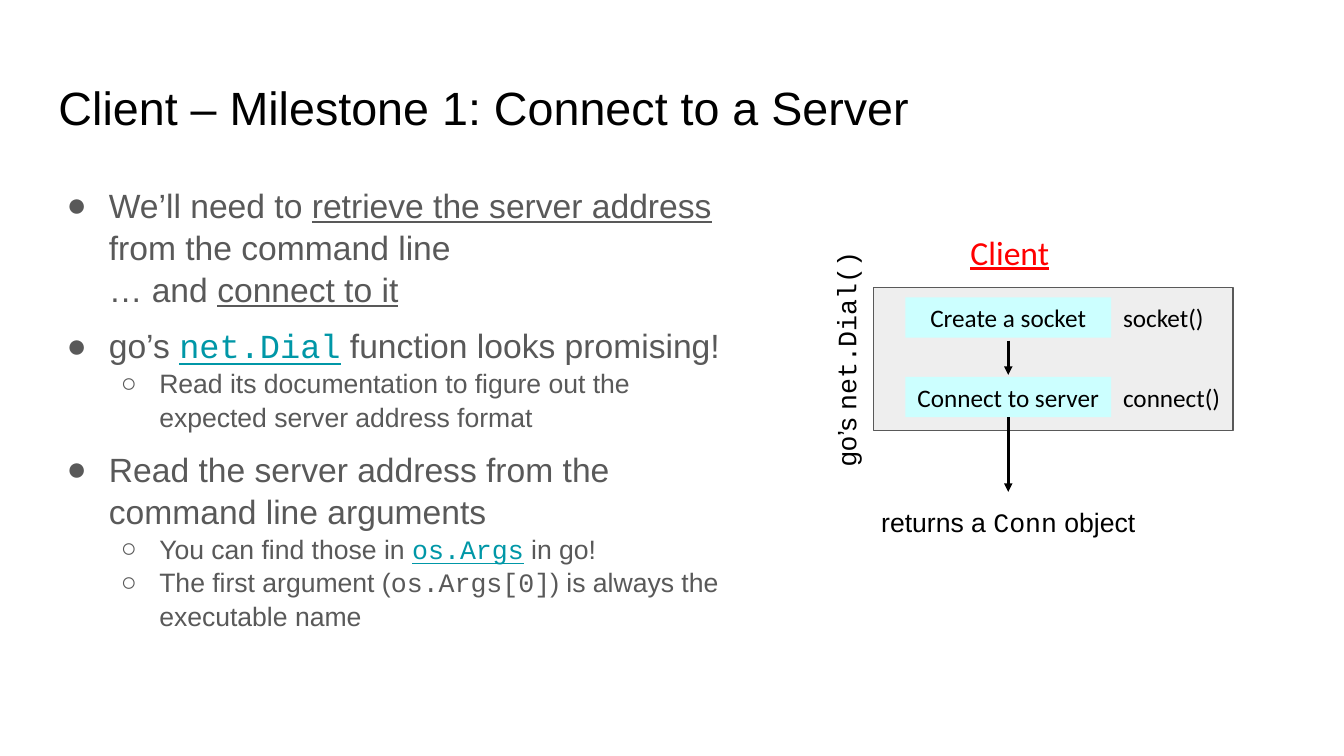
from dataclasses import dataclass

from lxml.etree import SubElement
from pptx import Presentation
from pptx.dml.color import RGBColor
from pptx.enum.shapes import MSO_CONNECTOR, MSO_SHAPE
from pptx.enum.text import MSO_ANCHOR, PP_ALIGN
from pptx.oxml.ns import qn
from pptx.util import Inches, Pt


@dataclass(frozen=True)
class Theme:
    black: str = "000000"
    gray: str = "595959"
    panel: str = "EEEEEE"
    step: str = "CCFFFF"
    link: str = "0097A7"
    heading: str = "FF0000"
    sans: str = "Arial"
    diagram: str = "Calibri"
    code: str = "Courier New"
    title_size: float = 33.3
    large: float = 24
    medium: float = 19
    small: float = 18


THEME = Theme()

# Each bullet: level, marker, space before in points, runs of (text, style).
BULLETS = [
    (0, "●", 0, [("We’ll need to ", ""), ("retrieve the server address ", "underline"),
                 ("from the command line", "")]),
    (0, None, 0, [("… and ", ""), ("connect to it", "underline")]),
    (0, "●", 10, [("go’s ", ""), ("net.Dial", "code link underline"),
                  (" function looks promising!", "")]),
    (1, "○", 0, [("Read its documentation to figure out the expected server address format", "")]),
    (0, "●", 10, [("Read the server address from the command line arguments", "")]),
    (1, "○", 0, [("You can find those in ", ""), ("os.Args", "code link underline"),
                 (" in go!", "")]),
    (1, "○", 0, [("The first argument (", ""), ("os.Args[0]", "code"),
                 (") is always the executable name", "")]),
]
STEPS = [("Create a socket", "socket()"), ("Connect to server", "connect()")]
STEP_LEFT, STEP_TOP, STEP_WIDTH, STEP_HEIGHT, STEP_PITCH = 8.98, 2.95, 2.04, 0.4, 0.79


def rgb(color):
    return RGBColor.from_string(color)


def write_runs(paragraph, runs, size, color, font_name=THEME.sans):
    """Add (text, style) runs; a style may hold the words code, link and underline."""
    for text, style in runs:
        run = paragraph.add_run()
        run.text = text
        run.font.size = Pt(size)
        run.font.name = THEME.code if "code" in style else font_name
        run.font.color.rgb = rgb(THEME.link if "link" in style else color)
        run.font.underline = "underline" in style


def set_insets(text_frame, horizontal, vertical):
    text_frame.margin_left = text_frame.margin_right = Inches(horizontal)
    text_frame.margin_top = text_frame.margin_bottom = Inches(vertical)
    text_frame.word_wrap = True


def add_text(slide, box, runs, size, color=THEME.black, font_name=THEME.sans,
             alignment=PP_ALIGN.CENTER, insets=(0.1, 0.1)):
    text_box = slide.shapes.add_textbox(*map(Inches, box))
    set_insets(text_box.text_frame, *insets)
    paragraph = text_box.text_frame.paragraphs[0]
    paragraph.alignment = alignment
    write_runs(paragraph, runs, size, color, font_name)
    return text_box


def add_rectangle(slide, box, fill, outline=None):
    shape = slide.shapes.add_shape(MSO_SHAPE.RECTANGLE, *map(Inches, box))
    shape.shadow.inherit = False
    shape.fill.solid()
    shape.fill.fore_color.rgb = rgb(fill)
    if outline:
        shape.line.color.rgb = rgb(outline)
        shape.line.width = Pt(0.75)
    else:
        shape.line.fill.background()
    return shape


def add_down_arrow(slide, x, top, bottom):
    arrow = slide.shapes.add_connector(
        MSO_CONNECTOR.STRAIGHT, Inches(x), Inches(top), Inches(x), Inches(bottom))
    arrow.line.color.rgb = rgb(THEME.black)
    arrow.line.width = Pt(2)
    SubElement(arrow.line._get_or_add_ln(), qn("a:tailEnd"), type="triangle")
    SubElement(arrow._element.spPr, qn("a:effectLst"))


def format_bullet(paragraph, level, marker):
    """Set the hanging indent and marker, after the paragraph spacing is in place."""
    hanging = (-0.42, -0.38)[level] if marker else 0
    properties = paragraph._p.get_or_add_pPr()
    properties.set("marL", str(Inches(0.5 * (level + 1))))
    properties.set("indent", str(Inches(hanging)))
    if marker:
        bullet_color = SubElement(properties, qn("a:buClr"))
        SubElement(bullet_color, qn("a:srgbClr"), val=THEME.gray)
        SubElement(properties, qn("a:buFont"), typeface=THEME.sans)
        SubElement(properties, qn("a:buChar"), char=marker)
    else:
        SubElement(properties, qn("a:buNone"))


def add_bullets(slide, box, bullets):
    text_frame = slide.shapes.add_textbox(*map(Inches, box)).text_frame
    set_insets(text_frame, 0.13, 0.13)
    for index, (level, marker, space_before, runs) in enumerate(bullets):
        paragraph = text_frame.add_paragraph() if index else text_frame.paragraphs[0]
        paragraph.level = level
        paragraph.line_spacing = 1.05
        paragraph.space_before = Pt(space_before)
        format_bullet(paragraph, level, marker)
        write_runs(paragraph, runs, (THEME.large, THEME.medium)[level], THEME.gray)


def add_step(slide, top, label, call):
    shape = add_rectangle(slide, (STEP_LEFT, top, STEP_WIDTH, STEP_HEIGHT), THEME.step)
    set_insets(shape.text_frame, 0.1, 0.05)
    shape.text_frame.vertical_anchor = MSO_ANCHOR.MIDDLE
    paragraph = shape.text_frame.paragraphs[0]
    paragraph.alignment = PP_ALIGN.CENTER
    write_runs(paragraph, [(label, "")], THEME.small, THEME.black, THEME.diagram)
    add_text(slide, (STEP_LEFT + STEP_WIDTH + 0.02, top, 1.31, STEP_HEIGHT), [(call, "")],
             THEME.small, font_name=THEME.diagram, alignment=PP_ALIGN.LEFT, insets=(0.1, 0.05))


def add_client_diagram(slide):
    add_rectangle(slide, (8.66, 2.85, 3.57, 1.42), THEME.panel, THEME.gray)
    add_text(slide, (9.52, 2.25, 0.99, 0.51), [("Client", "underline")], THEME.large,
             THEME.heading, THEME.diagram, insets=(0.1, 0.05))
    for index, (label, call) in enumerate(STEPS):
        add_step(slide, STEP_TOP + index * STEP_PITCH, label, call)
    center = STEP_LEFT + STEP_WIDTH / 2
    add_down_arrow(slide, center, 3.38, 3.72)
    add_down_arrow(slide, center, 4.14, 4.88)
    add_text(slide, (8.59, 4.92, 2.82, 0.51),
             [("returns a ", ""), ("Conn", "code"), (" object", "")], THEME.medium)
    dial_label = add_text(slide, (7.04, 3.36, 2.58, 0.4),
                          [("go’s ", ""), ("net.Dial()", "code")], THEME.medium)
    dial_label.rotation = 270


def main():
    presentation = Presentation()
    presentation.slide_width, presentation.slide_height = Inches(13.33), Inches(7.5)
    slide = presentation.slides.add_slide(presentation.slide_layouts[6])
    add_text(slide, (0.45, 0.65, 12.42, 0.83),
             [("Client – Milestone 1: Connect to a Server", "")], THEME.title_size,
             alignment=PP_ALIGN.LEFT, insets=(0.13, 0.13))
    add_bullets(slide, (0.45, 1.68, 6.89, 4.98), BULLETS)
    add_client_diagram(slide)
    presentation.save("out.pptx")


if __name__ == "__main__":
    main()
